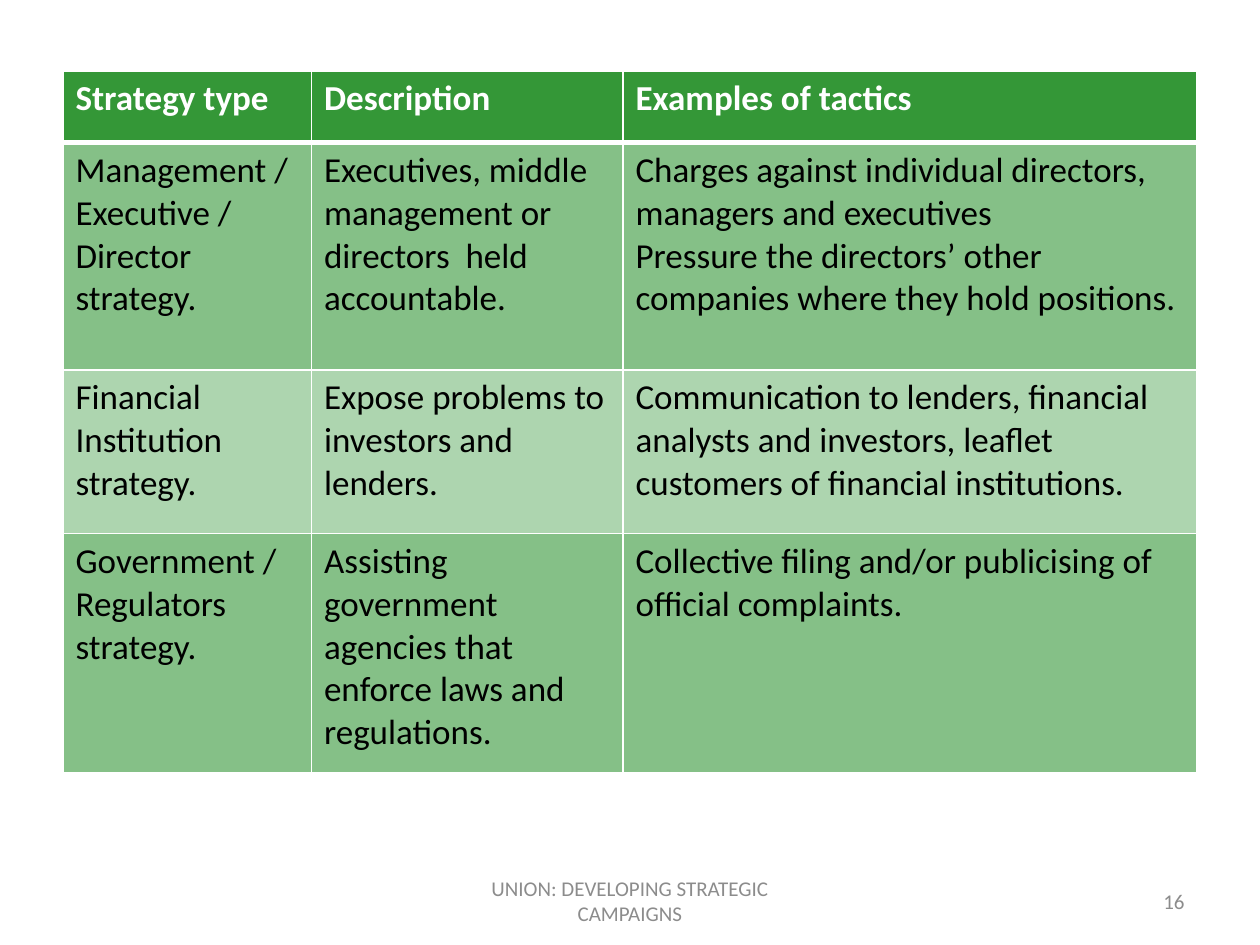
from lxml import etree
from pptx import Presentation
from pptx.dml.color import RGBColor
from pptx.enum import text
from pptx.oxml import ns
from pptx.util import Pt

COLORS = {"green": "349737", "white": "FFFFFF", "black": "000000", "gray": "8C8C8C"}
FONT = "Calibri"
COLUMN_WIDTHS = [142, 178, 328]
ROW_HEIGHTS = [41, 130, 93.5, 136.5]
STRATEGIES = [
    ["Strategy type", "Description", "Examples of tactics"],
    ["Management /Executive / Director  strategy.",
     "Executives, middle management or directors  held accountable.",
     "Charges against individual directors, managers and executives\n"
     "Pressure the directors’ other companies where they hold positions."],
    ["Financial Institution strategy.",
     "Expose problems to investors and lenders.",
     "Communication to lenders, financial analysts and investors, "
     "leaflet customers of financial institutions."],
    ["Government / Regulators strategy.",
     "Assisting government agencies that enforce laws and regulations.",
     "Collective filing and/or publicising of official complaints."],
]


def style_font(paragraph, size, color, bold=False):
    """Set the font of a whole paragraph."""
    font = paragraph.font
    font.name, font.size, font.bold = FONT, Pt(size), bold
    font.color.rgb = RGBColor.from_string(COLORS[color])


def fill_cell(cell, opacity):
    """Fill a cell with green at an opacity in percent."""
    cell.fill.solid()
    cell.fill.fore_color.rgb = RGBColor.from_string(COLORS["green"])
    if opacity < 100:
        color = cell._tc.tcPr.find(".//" + ns.qn("a:srgbClr"))
        etree.SubElement(color, ns.qn("a:alpha"), val=str(opacity * 1000))


def border_cell(cell, top, bottom):
    """Draw white borders, with the top and bottom widths given in points."""
    properties = cell._tc.get_or_add_tcPr()
    widths = {"L": 1, "R": 1, "T": top, "B": bottom}
    for index, (side, width) in enumerate(widths.items()):
        line = etree.Element(ns.qn(f"a:ln{side}"), w=str(Pt(width)))
        fill = etree.SubElement(line, ns.qn("a:solidFill"))
        etree.SubElement(fill, ns.qn("a:srgbClr"), val=COLORS["white"])
        properties.insert(index, line)


def add_strategy_table(slide, left, top):
    """Add the table of strategies, descriptions and tactics."""
    table = slide.shapes.add_table(
        len(ROW_HEIGHTS), len(COLUMN_WIDTHS), Pt(left), Pt(top),
        Pt(sum(COLUMN_WIDTHS)), Pt(sum(ROW_HEIGHTS))).table
    for column, width in zip(table.columns, COLUMN_WIDTHS):
        column.width = Pt(width)
    for row_index, (row, height) in enumerate(zip(table.rows, ROW_HEIGHTS)):
        row.height = Pt(height)
        header = row_index == 0
        opacity = 100 if header else 60 if row_index % 2 else 40
        for cell, wording in zip(row.cells, STRATEGIES[row_index]):
            cell.text = wording
            for paragraph in cell.text_frame.paragraphs:
                style_font(paragraph, 20, "white" if header else "black", header)
            fill_cell(cell, opacity)
            border_cell(cell, 3 if row_index == 1 else 1, 3 if header else 1)


def add_footer_text(slide, left, top, width, height, wording, alignment):
    """Add one gray footer text."""
    frame = slide.shapes.add_textbox(Pt(left), Pt(top), Pt(width), Pt(height)).text_frame
    frame.word_wrap = True
    frame.vertical_anchor = text.MSO_ANCHOR.MIDDLE
    paragraph = frame.paragraphs[0]
    paragraph.text = wording
    paragraph.alignment = alignment
    style_font(paragraph, 12, "gray")


def main():
    """Build and save the presentation."""
    presentation = Presentation()
    presentation.slide_width, presentation.slide_height = Pt(720), Pt(540)
    slide = presentation.slides.add_slide(presentation.slide_layouts[6])
    add_footer_text(slide, 246, 500.5, 228, 28.75,
                    "UNION: DEVELOPING STRATEGIC CAMPAIGNS", text.PP_ALIGN.CENTER)
    add_footer_text(slide, 516, 500.5, 168, 28.75, "16", text.PP_ALIGN.RIGHT)
    add_strategy_table(slide, 36, 40.5)
    presentation.save("out.pptx")


if __name__ == "__main__":
    main()
